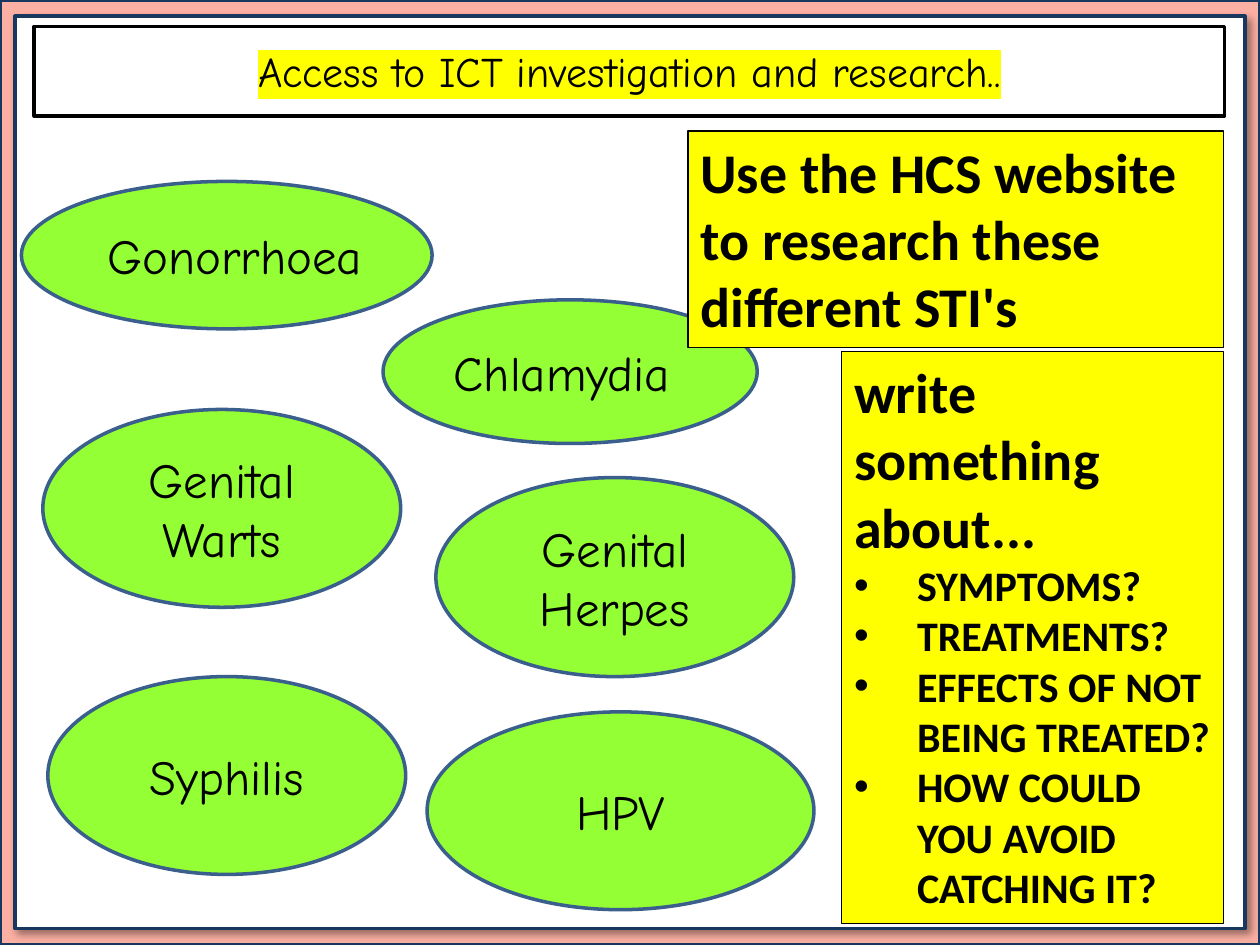
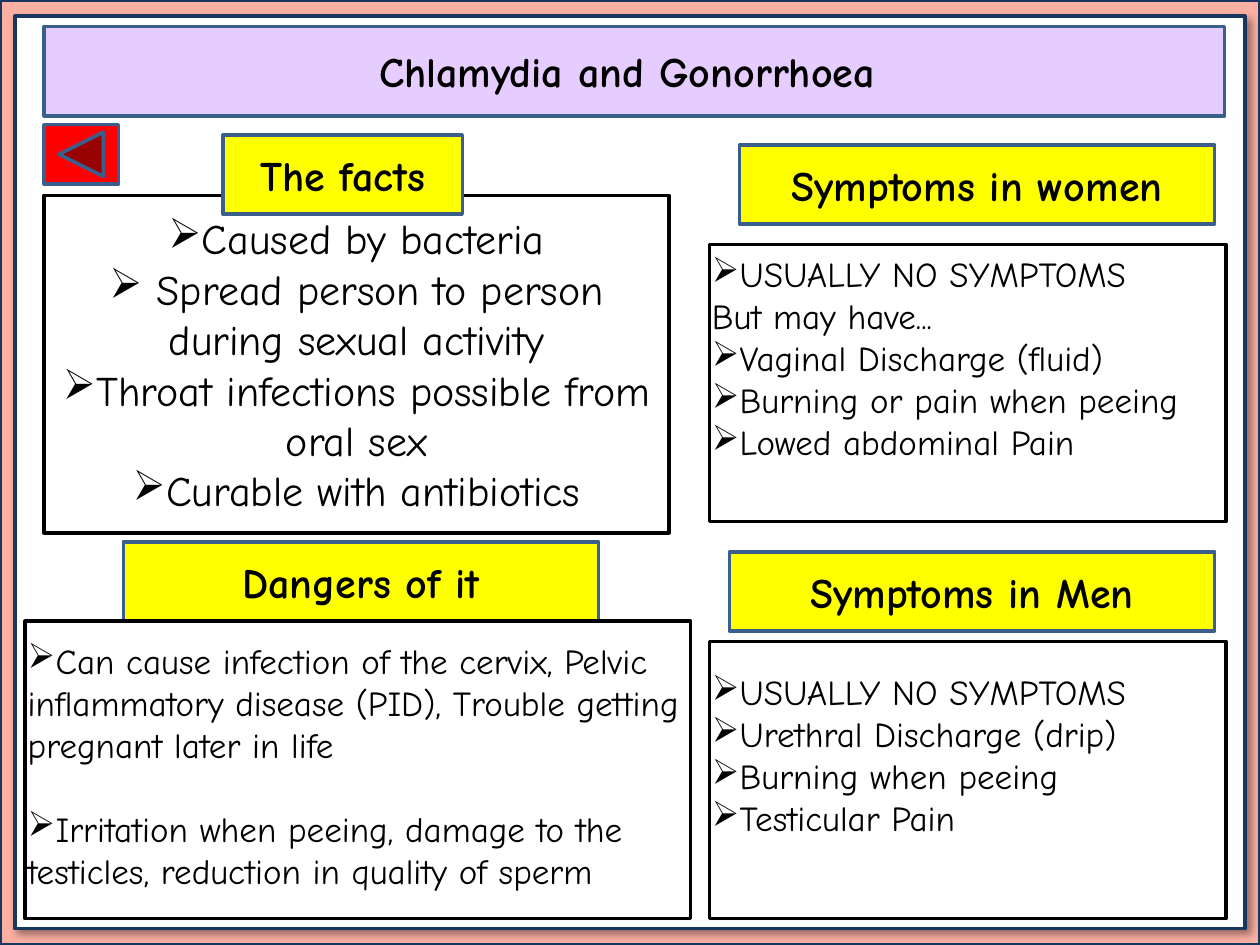
from collections import namedtuple

from lxml.etree import SubElement
from pptx import Presentation
from pptx.dml.color import RGBColor
from pptx.enum.shapes import MSO_SHAPE
from pptx.enum.text import MSO_ANCHOR, MSO_AUTO_SIZE, PP_ALIGN
from pptx.oxml.ns import qn
from pptx.util import Inches, Pt

Box = namedtuple("Box", "left top width height")

WHITE, BLACK, YELLOW = "FFFFFF", "000000", "FFFF00"
GREEN, LILAC, RED, PINK = "94FF34", "E6CDFF", "FF0000", "FCB0A3"
NAVY, STEEL = "17375E", "3A5F8C"
COMIC, CALIBRI = "Comic Neue", "Calibri"
TIGHT = (0.02, 0.01, 0.02, 0.01)
ROOMY = (0.1, 0.05, 0.1, 0.05)
ARROW, DOT = "➢", "•"


def rgb(code):
    return RGBColor.from_string(code)


def paint(shape, fill, line, weight=2):
    shape.fill.solid()
    shape.fill.fore_color.rgb = rgb(fill)
    shape.line.color.rgb = rgb(line)
    shape.line.width = Pt(weight)


def add_block(slide, box, fill, line, weight=2, kind=MSO_SHAPE.RECTANGLE):
    block = slide.shapes.add_shape(kind, *map(Inches, box))
    block.shadow.inherit = False
    paint(block, fill, line, weight)
    return block


def set_frame(shape, insets, anchor=MSO_ANCHOR.MIDDLE):
    frame = shape.text_frame
    frame.word_wrap = True
    frame.auto_size = MSO_AUTO_SIZE.NONE
    frame.vertical_anchor = anchor
    (frame.margin_left, frame.margin_top,
     frame.margin_right, frame.margin_bottom) = map(Inches, insets)
    return frame


def style(paragraph, size, font=COMIC, bold=False, align=PP_ALIGN.CENTER):
    paragraph.alignment = align
    paragraph.font.name = font
    paragraph.font.size = Pt(size)
    paragraph.font.bold = bold
    paragraph.font.color.rgb = rgb(BLACK)


def add_bullet(paragraph, mark, indent=0):
    properties = paragraph._p.get_or_add_pPr()
    properties.set("marL", str(Inches(indent)))
    properties.set("indent", str(-Inches(indent)))
    bullet = properties.makeelement(qn("a:buChar"), {"char": mark})
    defaults = properties.find(qn("a:defRPr"))
    defaults.addprevious(bullet)
    if mark == DOT:
        bullet.addprevious(
            properties.makeelement(qn("a:buFont"), {"typeface": "Arial"}))


def write(shape, lines, size, insets=ROOMY, **text_style):
    """Write one paragraph a line; a leading arrow becomes its bullet."""
    frame = set_frame(shape, insets)
    for number, line in enumerate(lines):
        paragraph = frame.paragraphs[0] if number == 0 else frame.add_paragraph()
        paragraph.text = line.removeprefix(ARROW)
        style(paragraph, size, **text_style)
        if line.startswith(ARROW):
            add_bullet(paragraph, ARROW)
    return frame


def add_border(slide):
    """Give the layout of the slide its pink border and white page."""
    border = add_block(slide, Box(0, 0, 10, 7.5), PINK, NAVY, 2.25)
    page = add_block(slide, Box(0.12, 0.13, 9.76, 7.24), WHITE, NAVY, 2.25)
    effects = page._element.spPr.find(qn("a:effectLst"))
    shadow = SubElement(effects, qn("a:outerShdw"), blurRad=str(Pt(4)),
                        dist=str(Pt(3)), dir="2700000", rotWithShape="0")
    shade = SubElement(shadow, qn("a:srgbClr"), val=BLACK)
    SubElement(shade, qn("a:alpha"), val="40000")
    layout_tree = slide.slide_layout.shapes.element
    for position, part in enumerate((border, page), start=2):
        layout_tree.insert(position, part.element)


def add_title(slide, text, left, fill, line, bold):
    title = slide.shapes.title
    title.left, title.top = Inches(left), Inches(0.21)
    title.width, title.height = Inches(9.72 - left), Inches(0.71)
    paint(title, fill, line)
    return write(title, [text], 24, bold=bold).paragraphs[0]


def highlight(paragraph, color):
    for run in paragraph.runs:
        mark = SubElement(run._r.get_or_add_rPr(), qn("a:highlight"))
        SubElement(mark, qn("a:srgbClr"), val=color)


def add_infection(slide, name, box):
    oval = add_block(slide, box, GREEN, STEEL, kind=MSO_SHAPE.OVAL)
    write(oval, [name], 28, TIGHT)


def add_task(slide, box, heading, questions=()):
    note = add_block(slide, box, YELLOW, BLACK, 0.75)
    frame = set_frame(note, ROOMY, MSO_ANCHOR.TOP)
    frame.text = heading
    style(frame.paragraphs[0], 32, CALIBRI, True, PP_ALIGN.LEFT)
    for question in questions:
        paragraph = frame.add_paragraph()
        paragraph.text = question
        style(paragraph, 24, CALIBRI, True, PP_ALIGN.LEFT)
        add_bullet(paragraph, DOT, 0.5)


def add_heading(slide, text, box):
    write(add_block(slide, box, YELLOW, STEEL), [text], 24, bold=True)


def add_panel(slide, box, heading, offset, heading_width, lines, size=20,
              align=PP_ALIGN.LEFT, bottom=0.01, gap=0, heading_in_front=False):
    """Place a framed list with a yellow heading offset from its corner."""
    heading_box = Box(box.left + offset[0], box.top + offset[1],
                      heading_width, 0.63)
    if not heading_in_front:
        add_heading(slide, heading, heading_box)
    body = add_block(slide, box, WHITE, BLACK)
    frame = write(body, lines, size, TIGHT[:3] + (bottom,), align=align)
    for paragraph in frame.paragraphs[1:]:
        paragraph.space_before = Pt(gap)
    if heading_in_front:
        add_heading(slide, heading, heading_box)


def build_research(slide):
    title = add_title(slide, "Access to ICT investigation and research..",
                      0.27, WHITE, BLACK, bold=False)
    highlight(title, YELLOW)
    infections = {
        "Chlamydia ": Box(3.04, 2.38, 2.97, 1.14),
        "Syphilis": Box(0.38, 5.37, 2.84, 1.57),
        "Genital Herpes": Box(3.46, 3.79, 2.84, 1.58),
        "Genital Warts": Box(0.34, 3.25, 2.84, 1.57),
        "HPV": Box(3.39, 5.65, 3.07, 1.57),
        " Gonorrhoea": Box(0.17, 1.44, 3.26, 1.17),
    }
    for name, box in infections.items():
        add_infection(slide, name, box)
    add_task(slide, Box(5.46, 1.04, 4.25, 1.72),
             "Use the HCS website to research these different STI's")
    add_task(slide, Box(6.68, 2.79, 3.03, 4.54), "write something about...",
             ["SYMPTOMS?", "TREATMENTS?", "EFFECTS OF NOT BEING TREATED?",
              "HOW COULD YOU AVOID CATCHING IT?"])


def build_infection_facts(slide):
    add_title(slide, "Chlamydia and Gonorrhoea ", 0.35, LILAC, STEEL, bold=True)
    add_panel(slide, Box(0.35, 1.55, 4.96, 2.68), "The facts", (1.42, -0.48), 1.9,
              ["➢Caused by bacteria",
               "➢ Spread person to person during sexual activity",
               "➢Throat infections possible from oral sex",
               "➢Curable with antibiotics"],
              size=24, align=PP_ALIGN.CENTER, heading_in_front=True)
    add_panel(slide, Box(5.63, 1.94, 4.1, 2.2), "Symptoms in women",
              (0.24, -0.79), 3.77,
              ["➢USUALLY NO SYMPTOMS", "But may have...",
               "➢Vaginal Discharge (fluid)", "➢Burning or pain when peeing",
               "➢Lowed abdominal Pain"], bottom=0.41)
    add_panel(slide, Box(5.63, 5.09, 4.1, 2.2), "Symptoms in Men",
              (0.16, -0.71), 3.85,
              ["➢USUALLY NO SYMPTOMS", "➢Urethral Discharge (drip)",
               "➢Burning when peeing", "➢Testicular Pain"], bottom=0.41)
    add_panel(slide, Box(0.2, 4.93, 5.28, 2.36), "Dangers of it",
              (0.78, -0.63), 3.77,
              ["➢Can cause infection of the cervix, Pelvic inflammatory disease "
               "(PID), Trouble getting pregnant later in life",
               "➢Irritation when peeing, damage to the testicles, reduction in "
               "quality of sperm"], bottom=0.08, gap=24)
    add_block(slide, Box(0.35, 0.99, 0.59, 0.47), RED, STEEL,
              kind=MSO_SHAPE.ACTION_BUTTON_BACK_OR_PREVIOUS)


def main():
    deck = Presentation()
    deck.slide_width, deck.slide_height = Inches(10), Inches(7.5)
    title_only = deck.slide_layouts.get_by_name("Title Only")
    research = deck.slides.add_slide(title_only)
    add_border(research)
    build_research(research)
    build_infection_facts(deck.slides.add_slide(title_only))
    deck.save("out.pptx")


if __name__ == "__main__":
    main()
